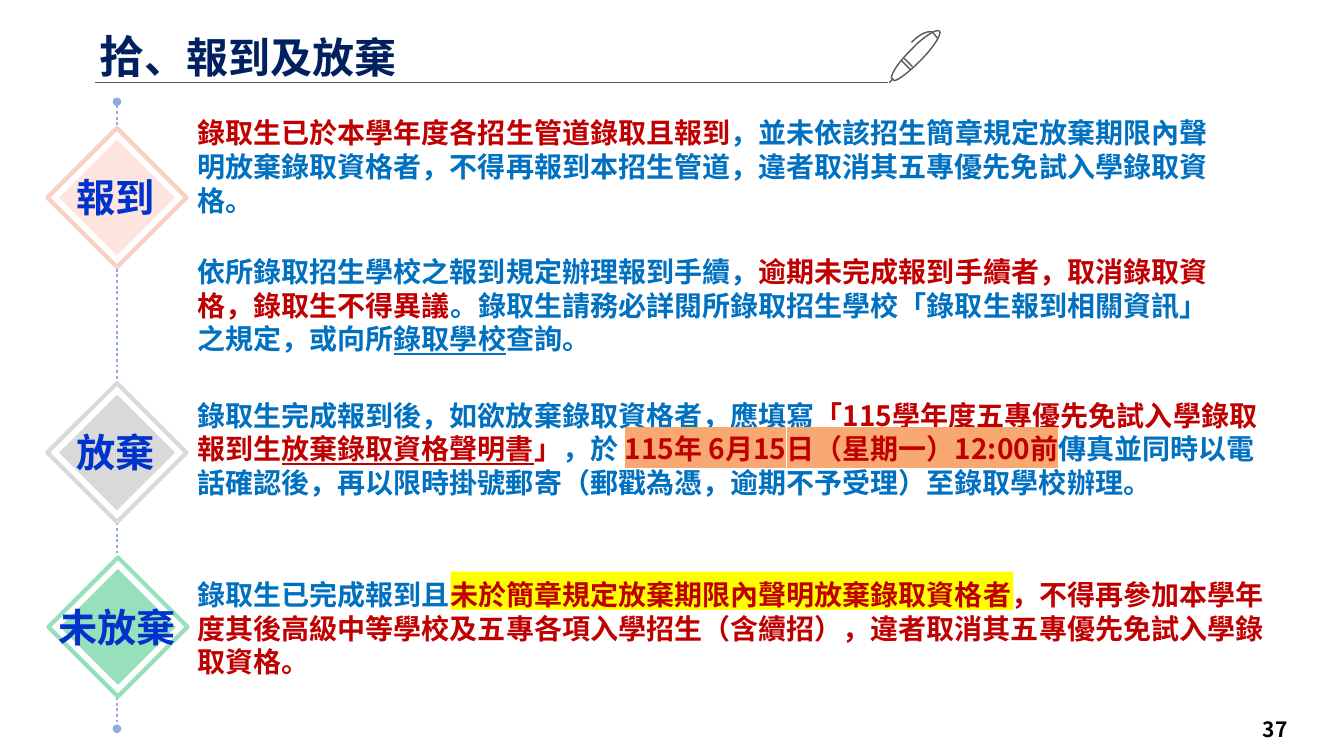
from dataclasses import dataclass
from typing import Optional

from lxml.etree import SubElement
from pptx import Presentation
from pptx.dml.color import RGBColor
from pptx.enum.dml import MSO_LINE_DASH_STYLE as Dash
from pptx.enum.shapes import MSO_CONNECTOR as Connector, MSO_SHAPE as Preset
from pptx.enum.text import MSO_ANCHOR as Anchor, PP_ALIGN as Align
from pptx.oxml.ns import qn
from pptx.util import Inches, Pt

FONT = "Noto Sans CJK SC"
NAVY = RGBColor(0x00, 0x20, 0x60)
BLUE = RGBColor(0x00, 0x70, 0xC0)
RED = RGBColor(0xC0, 0x00, 0x00)
LABEL_BLUE = RGBColor(0x00, 0x33, 0xCC)
BLACK = RGBColor(0x00, 0x00, 0x00)
WHITE = RGBColor(0xFF, 0xFF, 0xFF)
GRAY = RGBColor(0x59, 0x59, 0x59)
YELLOW = RGBColor(0xFF, 0xFF, 0x00)
ORANGE = RGBColor(0xF8, 0xA9, 0x71)
TIMELINE_BLUE = RGBColor(0x8F, 0xAA, 0xDC)
PINK_EDGE = RGBColor(0xFB, 0xCE, 0xC5)
PINK = RGBColor(0xFD, 0xE4, 0xDF)
SILVER = RGBColor(0xD9, 0xD9, 0xD9)
GREEN = RGBColor(0x98, 0xDF, 0xBB)


@dataclass
class Span:
    text: str
    color: RGBColor
    size: float = 20
    underline: bool = False
    highlight: Optional[RGBColor] = None


@dataclass
class Passage:
    left: float
    top: float
    width: float
    height: float
    paragraphs: list[list[Span]]
    before: float
    after: float


@dataclass
class Stage:
    label: str
    center_x: float
    center_y: float
    edge: RGBColor
    fill: RGBColor


def add_span(paragraph, span: Span) -> None:
    run = paragraph.add_run()
    run.text = span.text
    font_format = {"name": FONT, "size": Pt(span.size), "bold": True, "underline": span.underline}
    for name, value in font_format.items():
        setattr(run.font, name, value)
    run.font.color.rgb = span.color
    properties = run.font._element
    east_asian = SubElement(properties, qn("a:ea"), typeface=FONT)
    properties.find(qn("a:latin")).addnext(east_asian)
    if span.highlight is not None:
        highlight = SubElement(properties, qn("a:highlight"))
        SubElement(highlight, qn("a:srgbClr"), val=str(span.highlight))
        properties.find(qn("a:solidFill")).addnext(highlight)


def add_text(shapes, left: float, top: float, width: float, height: float,
             paragraphs: list[list[Span]], paragraph_format: dict, **frame_format):
    box = shapes.add_textbox(Inches(left), Inches(top), Inches(width), Inches(height))
    for name, value in ({"word_wrap": True} | frame_format).items():
        setattr(box.text_frame, name, value)
    for index, spans in enumerate(paragraphs):
        paragraph = box.text_frame.add_paragraph() if index else box.text_frame.paragraphs[0]
        for name, value in paragraph_format.items():
            setattr(paragraph, name, value)
        for span in spans:
            add_span(paragraph, span)
    return box


def add_passage(shapes, passage: Passage) -> None:
    box = add_text(shapes, passage.left, passage.top, passage.width, passage.height,
                   passage.paragraphs,
                   {"space_before": Pt(passage.before), "space_after": Pt(passage.after),
                    "line_spacing": Pt(24)})
    for paragraph in box.text_frame.paragraphs:
        paragraph._p.get_or_add_pPr().set("marL", str(Inches(0.3)))


def add_block(shapes, preset: Preset, left: float, top: float, width: float, height: float,
              fill: RGBColor, edge: Optional[RGBColor] = None) -> None:
    shape = shapes.add_shape(preset, Inches(left), Inches(top), Inches(width), Inches(height))
    shape.shadow.inherit = False
    shape.fill.solid()
    shape.fill.fore_color.rgb = fill
    if edge is None:
        shape.line.fill.background()
    else:
        shape.line.color.rgb = edge
        shape.line.width = Pt(3)


def add_line(shapes, start: tuple, end: tuple, color: RGBColor, width: float):
    line = shapes.add_connector(Connector.STRAIGHT, *map(Inches, start + end))
    line.line.color.rgb = color
    line.line.width = Pt(width)
    SubElement(line._element.spPr, qn("a:effectLst"))
    return line


def add_stage(shapes, stage: Stage) -> None:
    group = shapes.add_group_shape()
    for size, fill, edge in ((1.38, WHITE, stage.edge), (1.15, stage.fill, None)):
        add_block(group.shapes, Preset.DIAMOND, stage.center_x - size / 2,
                  stage.center_y - size / 2, size, size, fill, edge)
    width = 0.2 + 0.39 * len(stage.label)
    add_text(group.shapes, stage.center_x - width / 2 - 0.01, stage.center_y - 0.29, width, 0.57,
             [[Span(stage.label, LABEL_BLUE, 28)]], {"alignment": Align.CENTER},
             word_wrap=False, vertical_anchor=Anchor.MIDDLE)


def curve_points(start: tuple, first: tuple, second: tuple, end: tuple, steps: int = 8) -> list:
    points = []
    for step in range(1, steps + 1):
        t = step / steps
        weights = ((1 - t) ** 3, 3 * t * (1 - t) ** 2, 3 * t * t * (1 - t), t ** 3)
        points.append(tuple(sum(w * p[axis] for w, p in zip(weights, (start, first, second, end)))
                            for axis in (0, 1)))
    return points


def add_pen(shapes, strokes: list) -> None:
    builder = shapes.build_freeform(*map(Inches, strokes[0][0]), scale=1.0)
    for index, (start, *curves) in enumerate(strokes):
        if index:
            builder.move_to(*map(Inches, start))
        points, current = [], start
        for curve in curves:
            points += curve_points(current, *curve) if len(curve) == 3 else list(curve)
            current = points[-1]
        builder.add_line_segments([tuple(map(Inches, point)) for point in points],
                                  close=points[-1] == start)
    pen = builder.convert_to_shape()
    pen.shadow.inherit = False
    pen.fill.background()
    pen.line.color.rgb = GRAY
    pen.line.width = Pt(1)


# Each stroke is a start point, then curves (three points) or straight lines (one point)
PEN_STROKES = [
    [(9.03, 0.69), ((8.94, 0.6),)],
    [(8.97, 0.58), ((9.05, 0.66),)],
    [(9.32, 0.31), ((9.29, 0.28), (9.16, 0.36), (9.03, 0.5)),
     ((8.92, 0.61), (8.85, 0.71), (8.84, 0.77)), ((8.87, 0.8),),
     ((8.92, 0.79), (9.02, 0.71), (9.13, 0.6)), ((9.26, 0.47), (9.34, 0.34), (9.32, 0.31))],
    [(8.85, 0.79), ((8.82, 0.82),)],
    [(9.3, 0.38), ((9.25, 0.32),), ((9.25, 0.32), (9.18, 0.28), (9.04, 0.42))],
]

STAGES = [
    Stage("報到", 1.16, 1.96, PINK_EDGE, PINK),
    Stage("放棄", 1.16, 4.49, SILVER, SILVER),
    Stage("未放棄", 1.17, 6.22, GREEN, GREEN),
]

PASSAGES = [
    Passage(1.56, 1.1, 10.75, 2.16, [
        [Span("錄取生已於本學年度各招生管道錄取且報到", RED),
         Span("，並未依該招生簡章規定放棄期限內聲明放棄錄取資格者，不得再報到本招生管道，"
              "違者取消其五專優先免試入學錄取資格。", BLUE)],
        [Span("依所錄取招生學校之報到規定辦理報到手續，", BLUE),
         Span("逾期未完成報到手續者，取消錄取資格，錄取生不得異議", RED),
         Span("。錄取生請務必詳閱所錄取招生學校「錄取生報到相關資訊」之規定，或向所", BLUE),
         Span("錄取學校", BLUE, underline=True),
         Span("查詢。", BLUE)],
    ], 9, 18),
    Passage(1.56, 3.9, 11.04, 1.11, [
        [Span("錄取生完成報到後，如欲放棄錄取資格者，應填寫", BLUE),
         Span("「115學年度五專優先免試入學錄取報到生", RED),
         Span("放棄錄取資格聲明書", RED, underline=True),
         Span("」", RED),
         Span("，於 ", BLUE),
         Span("115年 6月15日（星期一）12:00前", RED, highlight=ORANGE),
         Span("傳真並同時以電話確認後，再以限時掛號郵寄（郵戳為憑，逾期不予受理）"
              "至錄取學校辦理。", BLUE)],
    ], 9, 4.5),
    Passage(1.56, 5.68, 11.21, 1.11, [
        [Span("錄取生已完成報到且", BLUE),
         Span("未於簡章規定放棄期限內聲明放棄錄取資格者，不得再參加本學年度其後高級中等學校"
              "及五專各項入學招生（含續招），違者取消其五專優先免試入學錄取資格。", RED)],
    ], 27, 4.5),
]


def main() -> None:
    presentation = Presentation()
    presentation.slide_width, presentation.slide_height = Inches(13.33), Inches(7.5)
    shapes = presentation.slides.add_slide(presentation.slide_layouts[6]).shapes

    # Title with its rule and pen
    add_line(shapes, (0.94, 0.82), (8.81, 0.82), GRAY, 0.5)
    add_pen(shapes, PEN_STROKES)
    add_text(shapes, 0.89, 0.34, 7.89, 0.48,
             [[Span("拾", NAVY, 32), Span("、報到及放棄", NAVY, 30)]],
             {"line_spacing": 0.9}, margin_top=0)

    # Page number
    add_text(shapes, 10.48, 7.09, 2.39, 0.29, [[Span("37", BLACK, 15)]],
             {"alignment": Align.RIGHT}, vertical_anchor=Anchor.MIDDLE)

    # Dotted timeline with its stages
    timeline = add_line(shapes, (1.16, 1.01), (1.16, 7.23), TIMELINE_BLUE, 2)
    timeline.line.dash_style = Dash.ROUND_DOT
    for end in ("a:headEnd", "a:tailEnd"):
        SubElement(timeline.line._get_or_add_ln(), qn(end), type="oval")
    for stage in STAGES:
        add_stage(shapes, stage)

    # Yellow marker behind the passages
    add_block(shapes, Preset.RECTANGLE, 4.47, 5.67, 5.58, 0.38, YELLOW)
    for passage in PASSAGES:
        add_passage(shapes, passage)

    presentation.save("out.pptx")


if __name__ == "__main__":
    main()
